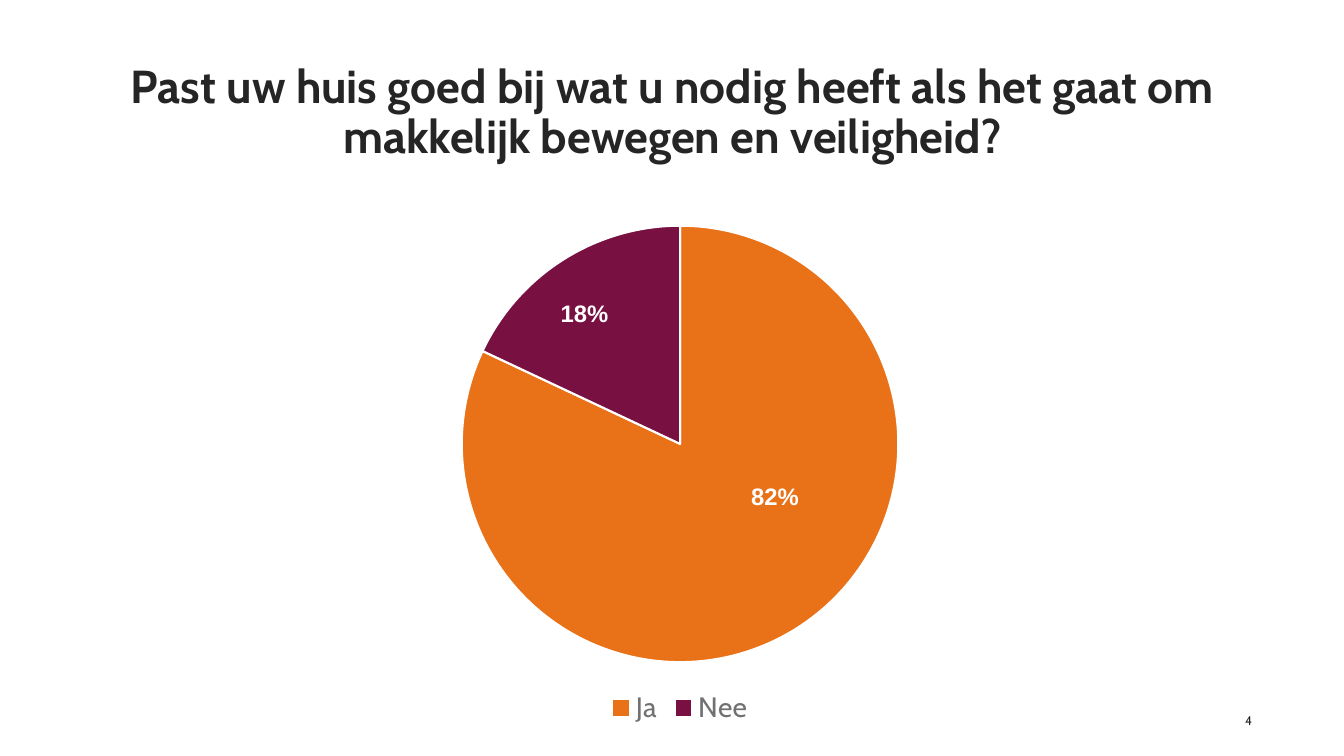
"""Build a slide with a pie chart on how well homes suit their residents."""
from dataclasses import dataclass

from lxml import etree
from pptx import Presentation
from pptx import util as u
from pptx.chart.data import CategoryChartData
from pptx.dml.color import RGBColor
from pptx.enum import chart as charts, text

EMU_PER_PX = 9144
COLORS = {
    "ink": "252525",
    "legend": "717171",
    "white": "FFFFFF",
    "orange": "E97219",
    "purple": "791042",
}
CHART_NS = "http://schemas.openxmlformats.org/drawingml/2006/chart"


@dataclass(frozen=True)
class Box:
    left: int
    top: int
    width: int
    height: int


@dataclass(frozen=True)
class Style:
    font: str
    size: float
    color: str
    bold: bool = False
    align: text.PP_ALIGN = text.PP_ALIGN.LEFT
    anchor: text.MSO_ANCHOR = text.MSO_ANCHOR.TOP
    spacing: float | u.Pt = 1.0


@dataclass(frozen=True)
class Answer:
    name: str
    percent: int
    color: str
    label: Box


CHART = Box(131, 146, 1087, 579)
PIE = Box(458, 224, 433, 433)
ANSWERS = [
    Answer("Ja", 82, "orange", Box(745, 477, 69, 28)),
    Answer("Nee", 18, "purple", Box(556, 296, 63, 28)),
]
TITLE_STYLE = Style("Cabin", 33, "ink", True, text.PP_ALIGN.CENTER, text.MSO_ANCHOR.MIDDLE, 0.9)
NUMBER_STYLE = Style("Cabin", 9, "ink", False, text.PP_ALIGN.RIGHT, text.MSO_ANCHOR.MIDDLE)
LABEL_STYLE = Style("Arial", 17, "white", True, spacing=u.Pt(21))


def px(value: int) -> int:
    return u.Emu(value * EMU_PER_PX)


def bounds(box: Box) -> tuple:
    return px(box.left), px(box.top), px(box.width), px(box.height)


def rgb(name: str) -> RGBColor:
    return RGBColor.from_string(COLORS[name])


def style_font(font, name: str, size: float, color: str, bold: bool = False) -> None:
    font.name = name
    font.size = u.Pt(size)
    font.bold = bold
    font.color.rgb = rgb(color)


def write(shape, words: str, style: Style) -> None:
    frame = shape.text_frame
    frame.text = words
    frame.word_wrap = True
    frame.auto_size = text.MSO_AUTO_SIZE.NONE
    frame.vertical_anchor = style.anchor
    frame.margin_left = frame.margin_right = frame.margin_top = frame.margin_bottom = 0
    paragraph = frame.paragraphs[0]
    paragraph.alignment = style.align
    paragraph.line_spacing = style.spacing
    style_font(paragraph.font, style.font, style.size, style.color, style.bold)


def add_title(slide, words: str, box: Box) -> None:
    title = slide.shapes.title
    title.left, title.top, title.width, title.height = bounds(box)
    write(title, words, TITLE_STYLE)


def add_text(slide, words: str, box: Box, style: Style) -> None:
    write(slide.shapes.add_textbox(*bounds(box)), words, style)


def place_plot(chart, outer: Box, inner: Box) -> None:
    plot_area = chart.plots[0]._element.getparent()
    for old in plot_area.findall(f"{{{CHART_NS}}}layout"):
        plot_area.remove(old)
    layout = etree.Element(f"{{{CHART_NS}}}layout")
    manual = etree.SubElement(layout, f"{{{CHART_NS}}}manualLayout")
    settings = {
        "layoutTarget": "inner",
        "xMode": "edge",
        "yMode": "edge",
        "x": (inner.left - outer.left) / outer.width,
        "y": (inner.top - outer.top) / outer.height,
        "w": inner.width / outer.width,
        "h": inner.height / outer.height,
    }
    for tag, value in settings.items():
        etree.SubElement(manual, f"{{{CHART_NS}}}{tag}", val=str(value))
    plot_area.insert(0, layout)


def add_pie(slide) -> None:
    data = CategoryChartData()
    data.categories = [answer.name for answer in ANSWERS]
    data.add_series("", [answer.percent for answer in ANSWERS])
    chart = slide.shapes.add_chart(charts.XL_CHART_TYPE.PIE, *bounds(CHART), data).chart
    style_font(chart.font, "Cabin", 10, "ink")
    chart.has_title = False
    chart.has_legend = True
    chart.legend.position = charts.XL_LEGEND_POSITION.BOTTOM
    chart.legend.include_in_layout = False
    style_font(chart.legend.font, "Cabin", 20, "legend")
    plot = chart.plots[0]
    plot.vary_by_categories = True
    for index, answer in enumerate(ANSWERS):
        slice_format = plot.series[0].points[index].format
        slice_format.fill.solid()
        slice_format.fill.fore_color.rgb = rgb(answer.color)
        slice_format.line.color.rgb = rgb("white")
        slice_format.line.width = u.Pt(1.5)
    place_plot(chart, CHART, PIE)


def main() -> None:
    presentation = Presentation()
    presentation.slide_width = px(1333)
    presentation.slide_height = px(750)
    slide = presentation.slides.add_slide(presentation.slide_layouts[5])
    add_title(
        slide,
        "Past uw huis goed bij wat u nodig heeft als het gaat om makkelijk bewegen en veiligheid?",
        Box(92, 79, 1150, 67),
    )
    add_text(slide, "4", Box(942, 705, 300, 20), NUMBER_STYLE)
    add_pie(slide)
    for answer in ANSWERS:
        add_text(slide, f"{answer.percent}%", answer.label, LABEL_STYLE)
    presentation.save("out.pptx")


if __name__ == "__main__":
    main()
